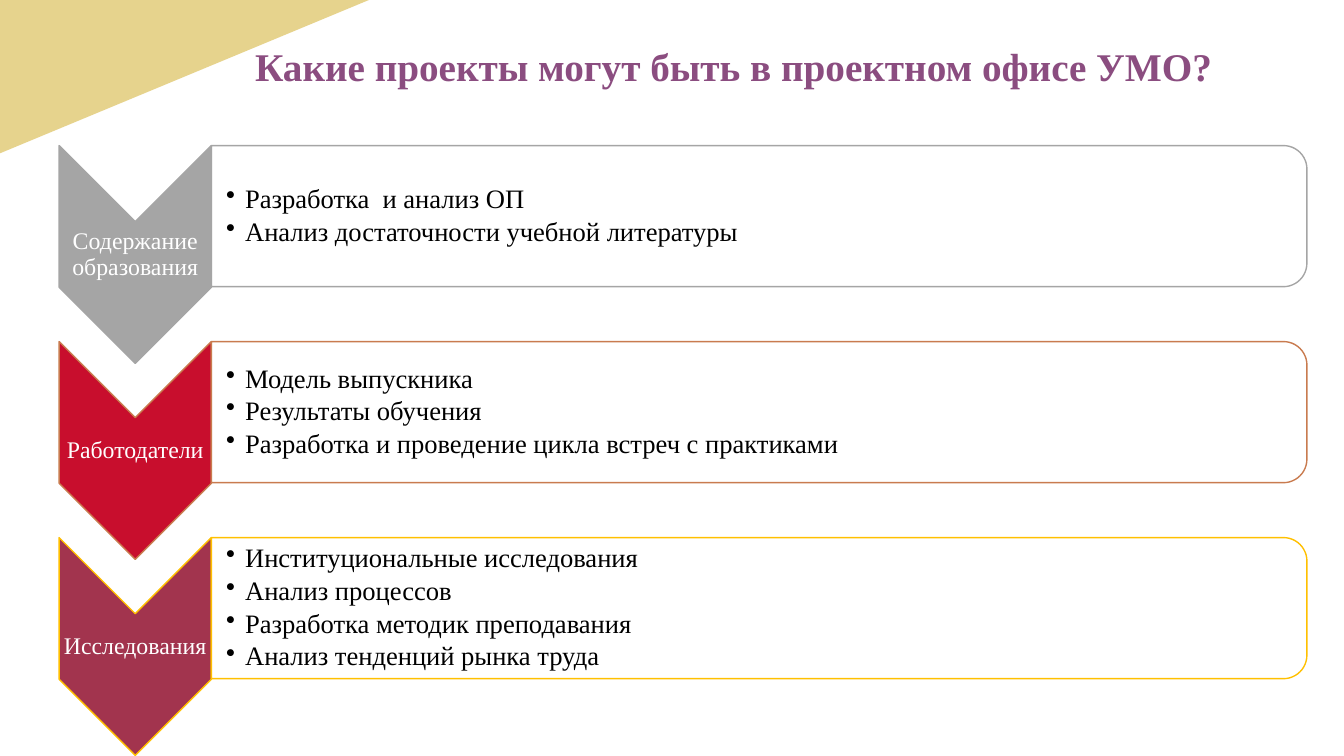
from collections import namedtuple
from dataclasses import dataclass

from lxml import etree
from pptx import Presentation
from pptx.dml.color import RGBColor
from pptx.enum.shapes import MSO_SHAPE
from pptx.enum.text import MSO_ANCHOR, MSO_AUTO_SIZE, PP_ALIGN
from pptx.oxml.ns import qn
from pptx.util import Pt

TRIANGLE = MSO_SHAPE.RIGHT_TRIANGLE
CHEVRON = MSO_SHAPE.CHEVRON
ROUNDED_END = MSO_SHAPE.ROUND_2_SAME_RECTANGLE
TOP, MIDDLE = MSO_ANCHOR.TOP, MSO_ANCHOR.MIDDLE
LEFT, CENTER = PP_ALIGN.LEFT, PP_ALIGN.CENTER
NO_FIT = MSO_AUTO_SIZE.NONE
QUARTER_TURN = 90
TITLE_ONLY = 5

Box = namedtuple("Box", "left top width height")
Category = namedtuple("Category", "label projects fill line")


@dataclass(frozen=True)
class Theme:
    font: str = "Times New Roman"
    title_size: float = 28
    label_size: float = 17
    project_size: float = 19
    title: str = "8B4D80"
    corner: str = "DBBE55"
    panel: str = "FFFFFF"
    label: str = "FFFFFF"
    project: str = "000000"


THEME = Theme()

TITLE = "Какие проекты могут быть в проектном офисе УМО?"
CATEGORIES = [
    Category("Содержание образования",
             ["Разработка  и анализ ОП",
              "Анализ достаточности учебной литературы"],
             "A5A5A5", "A5A5A5"),
    Category("Работодатели",
             ["Модель выпускника",
              "Результаты обучения",
              "Разработка и проведение цикла встреч с практиками"],
             "C80E2D", "C97B4F"),
    Category("Исследования",
             ["Институциональные исследования",
              "Анализ процессов",
              "Разработка методик преподавания",
              "Анализ тенденций рынка труда"],
             "A2344E", "FFC000"),
]

CORNER_BOX = Box(0, 0, 263.5, 109.5)
TITLE_BOX = Box(175, 36, 759, 31)
ROWS_BOX = Box(42.2, 104, 891.3, 435.5)
ROW_PITCH = 140
CHEVRON_WIDTH, CHEVRON_HEIGHT = 108.8, 155.5
PANEL_HEIGHT = 100.8


def add_turned_shape(slide, preset, box, fill, line=None, opacity=None):
    left = box.left + (box.width - box.height) / 2
    top = box.top + (box.height - box.width) / 2
    shape = slide.shapes.add_shape(
        preset, Pt(left), Pt(top), Pt(box.height), Pt(box.width))
    shape.rotation = QUARTER_TURN
    shape.shadow.inherit = False
    shape.fill.solid()
    shape.fill.fore_color.rgb = RGBColor.from_string(fill)
    if opacity is not None:
        color = shape.fill._xPr.find(".//" + qn("a:srgbClr"))
        etree.SubElement(color, qn("a:alpha"), val=str(opacity * 1000))
    if line is None:
        shape.line.fill.background()
    else:
        shape.line.color.rgb = RGBColor.from_string(line)
        shape.line.width = Pt(1)


def format_runs(paragraph, size, color, bold=False):
    for run in paragraph.runs:
        run.font.name = THEME.font
        run.font.size = Pt(size)
        run.font.bold = bold
        run.font.color.rgb = RGBColor.from_string(color)


def add_text(slide, box, text, size, color, align, left_inset, space_after):
    area = slide.shapes.add_textbox(*(Pt(length) for length in box))
    frame = area.text_frame
    frame.word_wrap = True
    frame.vertical_anchor = MIDDLE
    frame.margin_left = Pt(left_inset)
    frame.margin_right = frame.margin_top = frame.margin_bottom = Pt(0.8)
    frame.text = text
    for paragraph in frame.paragraphs:
        paragraph.alignment = align
        paragraph.line_spacing = 0.9
        paragraph.space_after = Pt(space_after)
        format_runs(paragraph, size, color)
    return frame


def add_bullet(paragraph):
    properties = paragraph._p.get_or_add_pPr()
    properties.set("marL", str(Pt(13.5)))
    properties.set("indent", str(Pt(-13.5)))
    etree.SubElement(properties, qn("a:buChar"), char="•")


def add_corner(slide, box):
    add_turned_shape(slide, TRIANGLE, box, THEME.corner, opacity=67)


def place_title(slide, box):
    title = slide.shapes.title
    title.left, title.top, title.width, title.height = (
        Pt(length) for length in box)
    frame = title.text_frame
    frame.text = TITLE
    frame.auto_size = NO_FIT
    frame.word_wrap = True
    frame.vertical_anchor = TOP
    heading = frame.paragraphs[0]
    heading.alignment = LEFT
    heading.line_spacing = 0.7
    format_runs(heading, THEME.title_size, THEME.title, bold=True)


def add_category(slide, box, category):
    chevron = Box(box.left, box.top, CHEVRON_WIDTH, CHEVRON_HEIGHT)
    add_turned_shape(slide, CHEVRON, chevron, category.fill, category.line)
    label = Box(box.left, box.top + CHEVRON_WIDTH / 2,
                CHEVRON_WIDTH, CHEVRON_HEIGHT - CHEVRON_WIDTH)
    add_text(slide, label, category.label, THEME.label_size, THEME.label,
             CENTER, 0.8, 6)

    panel = Box(box.left + CHEVRON_WIDTH, box.top,
                box.width - CHEVRON_WIDTH, PANEL_HEIGHT)
    add_turned_shape(slide, ROUNDED_END, panel, THEME.panel, category.line, 90)
    projects = Box(panel.left, panel.top + 5, panel.width - 5,
                   panel.height - 10)
    frame = add_text(slide, projects, "\n".join(category.projects),
                     THEME.project_size, THEME.project, LEFT, 10.6, 2.9)
    for paragraph in frame.paragraphs:
        add_bullet(paragraph)


def add_categories(slide, box):
    for index, category in enumerate(CATEGORIES):
        row = Box(box.left, box.top + index * ROW_PITCH,
                  box.width, CHEVRON_HEIGHT)
        add_category(slide, row, category)


def main():
    presentation = Presentation()
    presentation.slide_width = Pt(960)
    presentation.slide_height = Pt(540)
    slide = presentation.slides.add_slide(
        presentation.slide_layouts[TITLE_ONLY])
    add_corner(slide, CORNER_BOX)
    add_categories(slide, ROWS_BOX)
    place_title(slide, TITLE_BOX)
    presentation.save("out.pptx")


if __name__ == "__main__":
    main()
